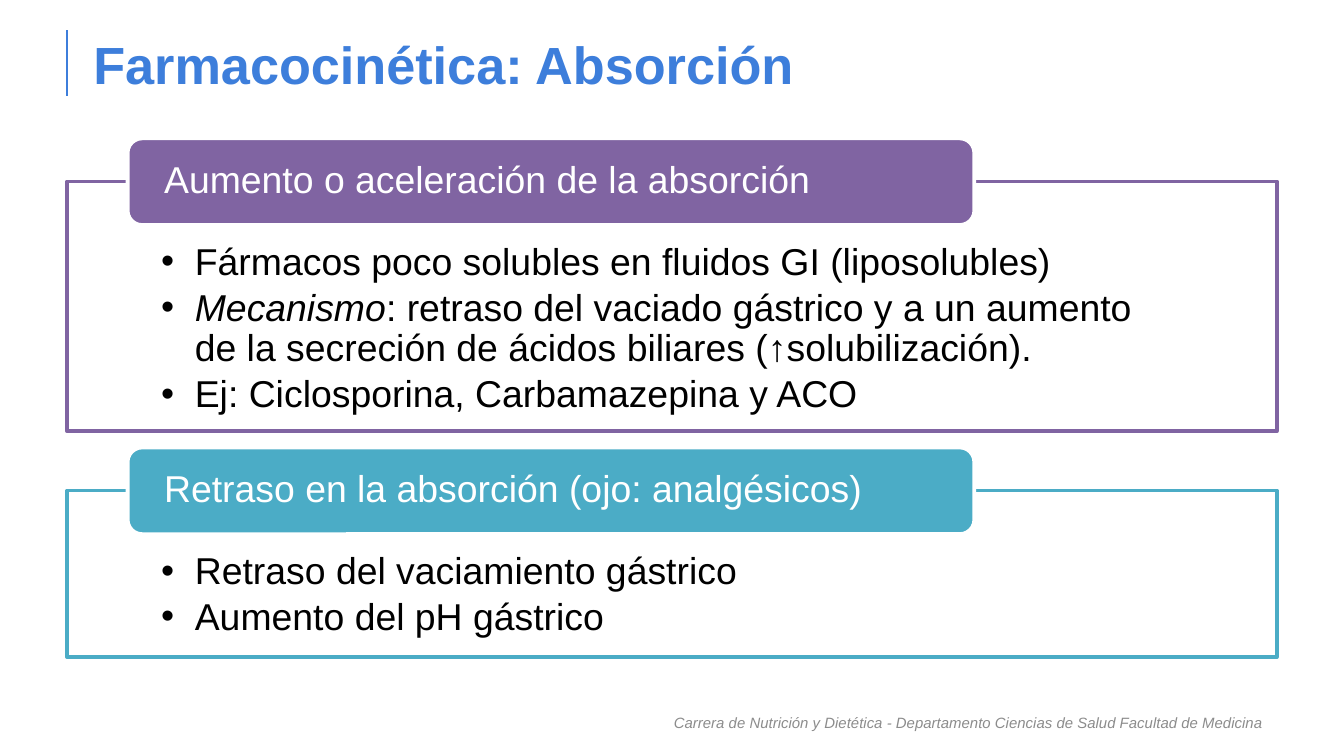
from lxml import etree
from pptx import Presentation
from pptx.dml.color import RGBColor
from pptx.enum.shapes import MSO_CONNECTOR, MSO_SHAPE
from pptx.enum.text import MSO_ANCHOR, PP_ALIGN
from pptx.oxml.ns import qn
from pptx.util import Pt

RECT, ROUND = MSO_SHAPE.RECTANGLE, MSO_SHAPE.ROUNDED_RECTANGLE
LINE = MSO_CONNECTOR.STRAIGHT
TOP, MID = MSO_ANCHOR.TOP, MSO_ANCHOR.MIDDLE
LEFT, RIGHT = PP_ALIGN.LEFT, PP_ALIGN.RIGHT

TITLE = "Farmacocinética: Absorción"
FOOTER = ("Carrera de Nutrición y Dietética - "
          "Departamento Ciencias de Salud Facultad de Medicina")
GROUPS = [
    ("Aumento o aceleración de la absorción", "8064A2", 372, [
        ("", "Fármacos poco solubles en fluidos GI (liposolubles)"),
        ("Mecanismo", ": retraso del vaciado gástrico y a un aumento "
                      "de la secreción de ácidos biliares (↑solubilización)."),
        ("", "Ej: Ciclosporina, Carbamazepina y ACO"),
    ]),
    ("Retraso en la absorción (ojo: analgésicos)", "4BACC6", 248, [
        ("", "Retraso del vaciamiento gástrico"),
        ("", "Aumento del pH gástrico"),
    ]),
]
BLUE, GREY, BLACK, WHITE = "3D7EDB", "8C8C8C", "000000", "FFFFFF"
SIDE, WIDE, START, GAP = 100, 1800, 270, 88
TAB_X, TAB_W, TAB_H, RISE = 190, 1260, 129, 64
RULE_TOP, RULE_END = 45, 143
INDENT = 50


def px(n):
    return n * 4572


def rgb(code):
    return RGBColor.from_string(code)


def frame(shape, insets, anchor):
    text = shape.text_frame
    text.word_wrap = True
    text.vertical_anchor = anchor
    text.margin_left, text.margin_top, text.margin_right, text.margin_bottom = map(px, insets)
    return text


def style(para, size, color, bold=False, align=LEFT):
    para.alignment = align
    para.font.name = "Arial"
    para.font.size = Pt(size)
    para.font.bold = bold
    para.font.color.rgb = rgb(color)


def label(box, insets, text, size, color, bold=False, align=LEFT):
    shape = slide.shapes.add_textbox(*map(px, box))
    para = frame(shape, insets, MID).paragraphs[0]
    para.text = text
    style(para, size, color, bold, align)
    return para


def block(kind, box, fill, line):
    shape = slide.shapes.add_shape(kind, *map(px, box))
    shape.shadow.inherit = False
    shape.fill.solid()
    shape.fill.fore_color.rgb = rgb(fill)
    shape.line.color.rgb = rgb(line)
    shape.line.width = Pt(2)
    return shape


def bullet(para):
    props = para._p.get_or_add_pPr()
    props.set("marL", str(px(INDENT)))
    props.set("indent", str(-px(INDENT)))
    etree.SubElement(props, qn("a:buFont")).set("typeface", "Arial")
    etree.SubElement(props, qn("a:buChar")).set("char", "•")


def panel(top, head, color, high, items):
    body = block(RECT, (SIDE, top, WIDE, high), WHITE, color)
    tint = body._element.spPr.find(qn("a:solidFill"))[0]
    etree.SubElement(tint, qn("a:alpha")).set("val", "90000")
    text = frame(body, (140, 92, 140, 32), TOP)
    for i, (lead, rest) in enumerate(items):
        para = text.add_paragraph() if i else text.paragraphs[0]
        if lead:
            run = para.add_run()
            run.text = lead
            run.font.italic = True
        para.add_run().text = rest
        para.line_spacing = 0.9
        para.space_after = Pt(3)
        bullet(para)
        style(para, 20, BLACK)
    tab = block(ROUND, (TAB_X, top - RISE, TAB_W, TAB_H), color, WHITE)
    para = frame(tab, (48, 0, 48, 0), MID).paragraphs[0]
    para.text = head
    para.line_spacing = 0.9
    style(para, 20, WHITE)


deck = Presentation()
deck.slide_width, deck.slide_height = px(2000), px(1125)
slide = deck.slides.add_slide(deck.slide_layouts[6])

rule = slide.shapes.add_connector(LINE, px(SIDE), px(RULE_TOP), px(SIDE), px(RULE_END))
rule.line.color.rgb = rgb(BLUE)
rule.line.width = Pt(1)
etree.SubElement(rule._element.spPr, qn("a:effectLst"))
label((SIDE, RULE_TOP, WIDE, RULE_END - RULE_TOP), (39, 24, 20, 24), TITLE, 28, BLUE, bold=True)

top = START
for head, color, high, items in GROUPS:
    panel(top, head, color, high, items)
    top += high + GAP

note = label((SIDE, 1045, WIDE, 60), (20, 24, 20, 24), FOOTER, 8, GREY, align=RIGHT)
note.font.italic = True

deck.save("out.pptx")
